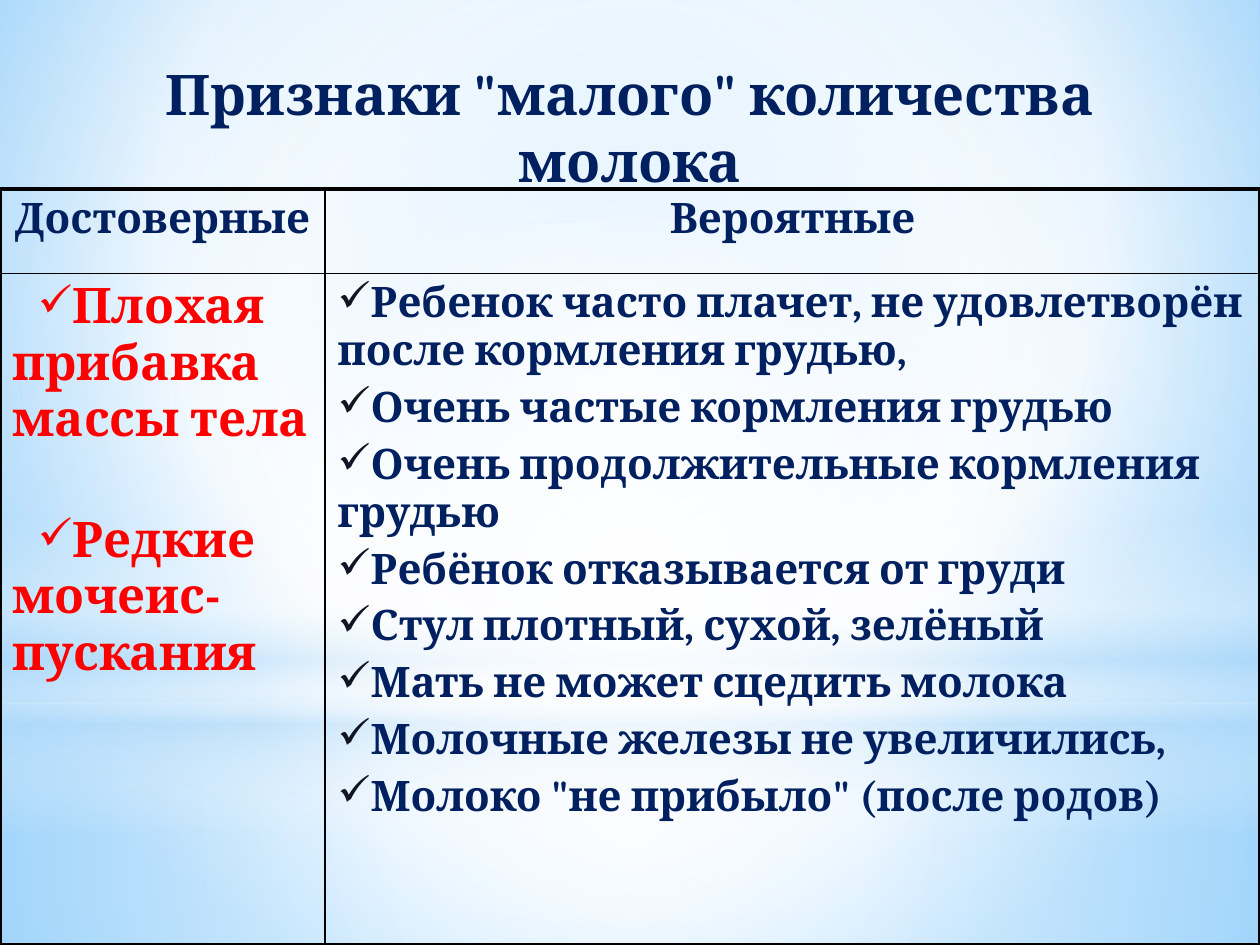
from lxml import etree
from pptx import Presentation
from pptx.dml.color import RGBColor
from pptx.enum.shapes import MSO_SHAPE
from pptx.enum.text import PP_ALIGN
from pptx.oxml.ns import qn
from pptx.util import Inches, Pt

RECTANGLE, OVAL = MSO_SHAPE.RECTANGLE, MSO_SHAPE.OVAL
CENTER, LEFT = PP_ALIGN.CENTER, PP_ALIGN.LEFT
WIDTH, HEIGHT = 10, 7.5
FONT = "Cambria"
COLORS = {
    "navy": "002060", "red": "FF0000", "ink": "111422", "black": "000000",
    "white": "FFFFFF", "pale": "B4DCFA", "sky": "9ED5FF", "blue": "5BB9FF",
}
MIDDLE = (50, 50, 50, 50)
GLOWS = [
    (RECTANGLE, 5.58, 1.92, [(0, "white", 91), (37, "white", 76), (100, "pale", 79)], MIDDLE),
    (RECTANGLE, 0, 5.58, [(0, "white", 89), (48, "white", 62), (100, "pale", 79)], MIDDLE),
    (RECTANGLE, 4.12, 2.5, [(0, "white", 0), (29, "white", 30), (45, "pale", 40),
                            (55, "white", 26), (65, "pale", 60), (100, "white", 0)], None),
    (OVAL, 1.75, 5.58, [(0, "white", 100), (56, "white", 0)], MIDDLE),
]
CERTAIN_SIGNS = ["Плохая прибавка массы тела", "Редкие мочеис-пускания"]
PROBABLE_SIGNS = [
    "Ребенок часто плачет, не удовлетворён после кормления грудью,",
    "Очень частые кормления грудью",
    "Очень продолжительные кормления грудью",
    "Ребёнок отказывается от груди",
    "Стул плотный, сухой, зелёный",
    "Мать не может сцедить молока",
    "Молочные железы не увеличились,",
    'Молоко "не прибыло" (после родов)',
]


def add_node(parent, tag, **attributes):
    """Append a drawing element with the given attributes."""
    node = etree.SubElement(parent, qn(f"a:{tag}"))
    for name, value in attributes.items():
        node.set(name, str(value))
    return node


def paint_gradient(fill, owner, stops, focus):
    """Give the owner a circular gradient, or a vertical one without focus."""
    fill.gradient()
    gradient = owner.find(f".//{qn('a:gradFill')}")
    for child in list(gradient):
        gradient.remove(child)
    stop_list = add_node(gradient, "gsLst")
    for position, color, opacity in stops:
        stop = add_node(stop_list, "gs", pos=position * 1000)
        tint = add_node(stop, "srgbClr", val=COLORS[color])
        if opacity < 100:
            add_node(tint, "alpha", val=opacity * 1000)
    if focus:
        edges = {side: share * 1000 for side, share in zip("ltrb", focus)}
        add_node(add_node(gradient, "path", path="circle"), "fillToRect", **edges)
    else:
        add_node(gradient, "lin", ang=90 * 60000, scaled=0)


def add_glow(page, kind, top, height, stops, focus):
    """Add a full-width translucent band."""
    glow = page.shapes.add_shape(kind, 0, Inches(top), Inches(WIDTH), Inches(height))
    glow.shadow.inherit = False
    glow.line.fill.background()
    paint_gradient(glow.fill, glow._element, stops, focus)


def add_span(para, text, size, color):
    """Add one bold run to a paragraph."""
    span = para.add_run()
    span.text = text
    span.font.name, span.font.size, span.font.bold = FONT, Pt(size), True
    span.font.color.rgb = RGBColor.from_string(COLORS[color])


def add_check(para, color, share, indent):
    """Set a check mark as the bullet of a paragraph."""
    properties = para._p.get_or_add_pPr()
    properties.set("marL", "0")
    properties.set("indent", str(Inches(indent)))
    add_node(add_node(properties, "buClr"), "srgbClr", val=COLORS[color])
    add_node(properties, "buSzPct", val=share * 1000)
    add_node(properties, "buChar", char="✓")


def fill_list(cell, items, size, color, gap, bullet):
    """Write checked items into a cell."""
    frame = cell.text_frame
    for index, item in enumerate(items):
        para = frame.add_paragraph() if index else frame.paragraphs[0]
        para.alignment = LEFT
        add_check(para, *bullet)
        if index:
            para.space_before = Pt(gap)
        add_span(para, item, size, color)


def frame_cell(cell, row, column):
    """Draw thick outer and thin inner borders around a clear cell."""
    properties = cell._tc.get_or_add_tcPr()
    outer = {"L": column == 0, "R": column == 1, "T": row == 0, "B": row == 1}
    for side, is_outer in outer.items():
        line = add_node(properties, f"ln{side}", w=Pt(2.25 if is_outer else 1))
        add_node(add_node(line, "solidFill"), "srgbClr", val=COLORS["black"])
    cell.fill.background()


def add_title(page, text):
    """Add the centred slide title."""
    box = page.shapes.add_textbox(Inches(0.05 * WIDTH), Inches(0.42),
                                  Inches(0.9 * WIDTH), Inches(0.53))
    box.text_frame.word_wrap = True
    para = box.text_frame.paragraphs[0]
    para.alignment = CENTER
    add_span(para, text, 32, "navy")


def add_signs_table(page):
    """Add the table of certain and probable signs."""
    top = 0.2 * HEIGHT
    table = page.shapes.add_table(2, 2, 0, Inches(top), Inches(WIDTH),
                                  Inches(HEIGHT - top)).table
    table.first_row = table.horz_banding = False
    for column, width in zip(table.columns, (2.58, 7.42)):
        column.width = Inches(width)
    for row, height in zip(table.rows, (0.67, 5.33)):
        row.height = Inches(height)
    for row in range(2):
        for column in range(2):
            frame_cell(table.cell(row, column), row, column)
    for column, heading in enumerate(("Достоверные", "Вероятные")):
        para = table.cell(0, column).text_frame.paragraphs[0]
        para.alignment = CENTER
        add_span(para, heading, 24, "navy")
    fill_list(table.cell(1, 0), CERTAIN_SIGNS, 28, "red", 37, ("red", 90, 0.2))
    fill_list(table.cell(1, 1), PROBABLE_SIGNS, 24, "navy", 4.8, ("ink", 100, 0))


def main():
    """Build and save the slide."""
    deck = Presentation()
    deck.slide_width, deck.slide_height = Inches(WIDTH), Inches(HEIGHT)
    page = deck.slides.add_slide(deck.slide_layouts[6])
    backdrop = [(0, "sky", 100), (60, "white", 100), (100, "blue", 100)]
    paint_gradient(page.background.fill, page._element, backdrop, (20, 10, 20, 60))
    for glow in GLOWS:
        add_glow(page, *glow)
    add_title(page, 'Признаки "малого" количества молока')
    add_signs_table(page)
    deck.save("out.pptx")


if __name__ == "__main__":
    main()
